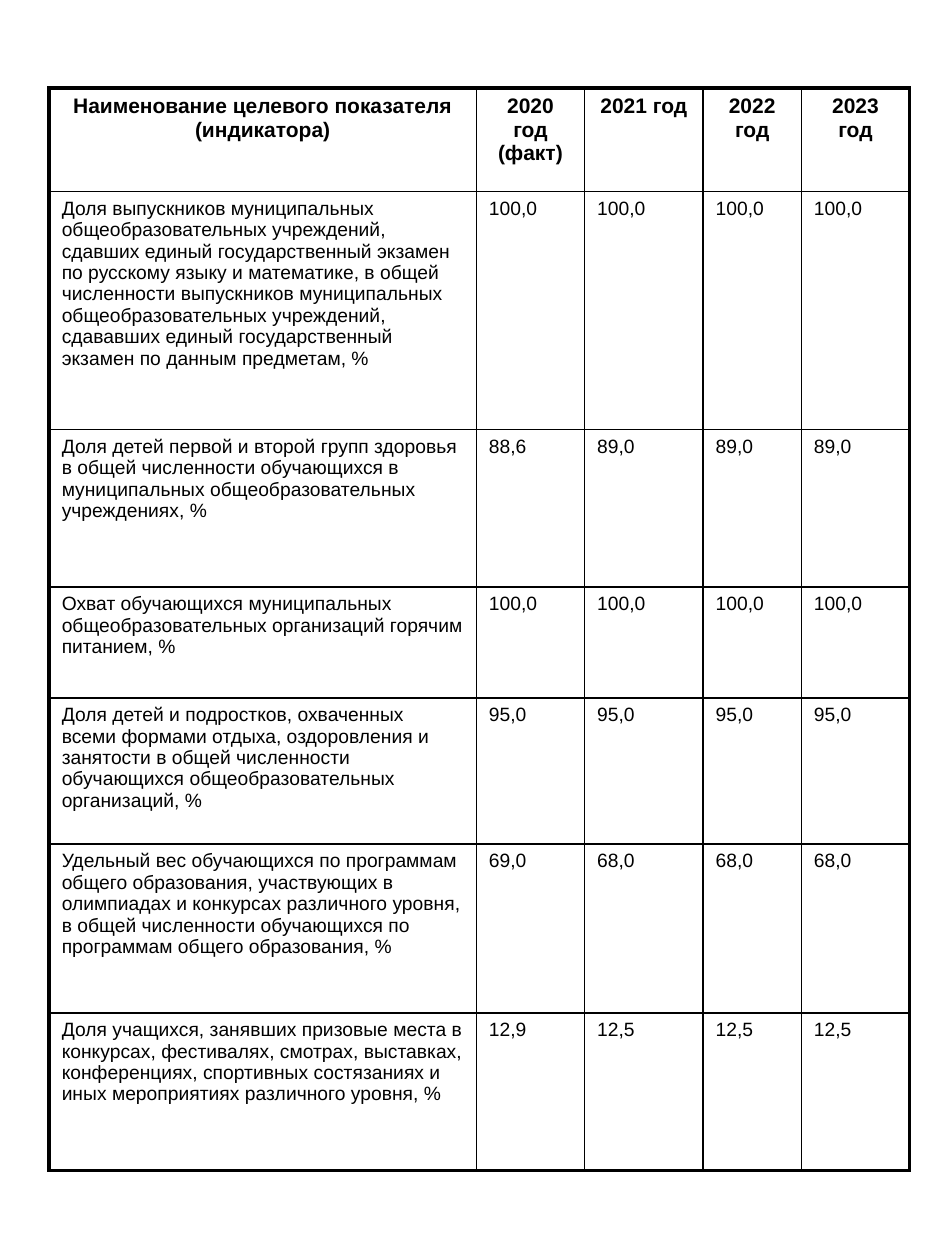
from dataclasses import dataclass

from lxml import etree
from pptx import Presentation
from pptx.dml.color import RGBColor
from pptx.enum import text
from pptx.oxml import ns
from pptx.util import Inches, Pt

COLORS = {"ink": "000000"}
FONT = "Arial"
INNER, OUTER = 1, 2.25  # border widths in points
COL_WIDTHS = [3.39, 0.86, 0.94, 0.78, 0.86]
HEADER_HEIGHT = 0.82
HEADER = ["Наименование целевого показателя (индикатора)",
          "2020 год (факт)", "2021 год", "2022 год", "2023 год"]


@dataclass
class Indicator:
    name: str
    height: float
    values: list[str]


INDICATORS = [
    Indicator("Доля выпускников муниципальных общеобразовательных учреждений, "
              "сдавших единый государственный экзамен по русскому языку и "
              "математике, в общей численности выпускников муниципальных "
              "общеобразовательных учреждений, сдававших единый "
              "государственный экзамен по данным предметам, %",
              1.89, ["100,0"] * 4),
    Indicator("Доля детей первой и второй групп здоровья в общей численности "
              "обучающихся в муниципальных общеобразовательных учреждениях, %",
              1.25, ["88,6"] + ["89,0"] * 3),
    Indicator("Охват обучающихся муниципальных общеобразовательных "
              "организаций горячим питанием, %",
              0.88, ["100,0"] * 4),
    Indicator("Доля детей и подростков, охваченных всеми формами отдыха, "
              "оздоровления и занятости в общей численности обучающихся "
              "общеобразовательных организаций, %",
              1.16, ["95,0"] * 4),
    Indicator("Удельный вес обучающихся по программам общего образования, "
              "участвующих в олимпиадах и конкурсах различного уровня, в общей "
              "численности обучающихся по программам общего образования, %",
              1.34, ["69,0"] + ["68,0"] * 3),
    Indicator("Доля учащихся, занявших призовые места в конкурсах, "
              "фестивалях, смотрах, выставках, конференциях, спортивных "
              "состязаниях и иных мероприятиях различного уровня, %",
              1.25, ["12,9"] + ["12,5"] * 3),
]


def add_border(cell, side: str, width: float) -> None:
    tc_pr = cell._tc.get_or_add_tcPr()
    ln = etree.SubElement(tc_pr, ns.qn(f"a:ln{side}"), w=str(Pt(width)))
    fill = etree.SubElement(ln, ns.qn("a:solidFill"))
    etree.SubElement(fill, ns.qn("a:srgbClr"), val=COLORS["ink"])


def fill_cell(cell, content: str, is_header: bool) -> None:
    tf = cell.text_frame
    tf.text = content
    p = tf.paragraphs[0]
    p.alignment = text.PP_ALIGN.CENTER if is_header else text.PP_ALIGN.LEFT
    spacing = etree.SubElement(p._p.get_or_add_pPr(), ns.qn("a:spcBef"))
    etree.SubElement(spacing, ns.qn("a:spcPct"), val="20000")
    font = p.runs[0].font
    font.name = FONT
    font.size = Pt(12 if is_header else 11)
    font.bold = is_header
    font.color.rgb = RGBColor.from_string(COLORS["ink"])


def add_indicator_table(slide) -> None:
    rows = [HEADER] + [[item.name, *item.values] for item in INDICATORS]
    heights = [HEADER_HEIGHT] + [item.height for item in INDICATORS]
    table = slide.shapes.add_table(
        len(rows), len(COL_WIDTHS), Inches(0.39), Inches(0.7),
        Inches(sum(COL_WIDTHS)), Inches(sum(heights))).table
    table.first_row = table.horz_banding = False
    for column, width in zip(table.columns, COL_WIDTHS):
        column.width = Inches(width)
    for row, height in zip(table.rows, heights):
        row.height = Inches(height)

    # Thick frame around the table, thin lines inside
    last_row, last_col = len(rows) - 1, len(COL_WIDTHS) - 1
    for i, row in enumerate(rows):
        for j, content in enumerate(row):
            cell = table.cell(i, j)
            fill_cell(cell, content, is_header=i == 0)
            on_edge = {"L": j == 0, "R": j == last_col,
                       "T": i == 0, "B": i == last_row}
            for side, outer in on_edge.items():
                add_border(cell, side, OUTER if outer else INNER)
            cell.fill.background()


def main() -> None:
    prs = Presentation()
    prs.slide_width, prs.slide_height = Inches(7.5), Inches(10)
    slide = prs.slides.add_slide(prs.slide_layouts[6])  # blank layout
    add_indicator_table(slide)
    prs.save("out.pptx")


if __name__ == "__main__":
    main()
